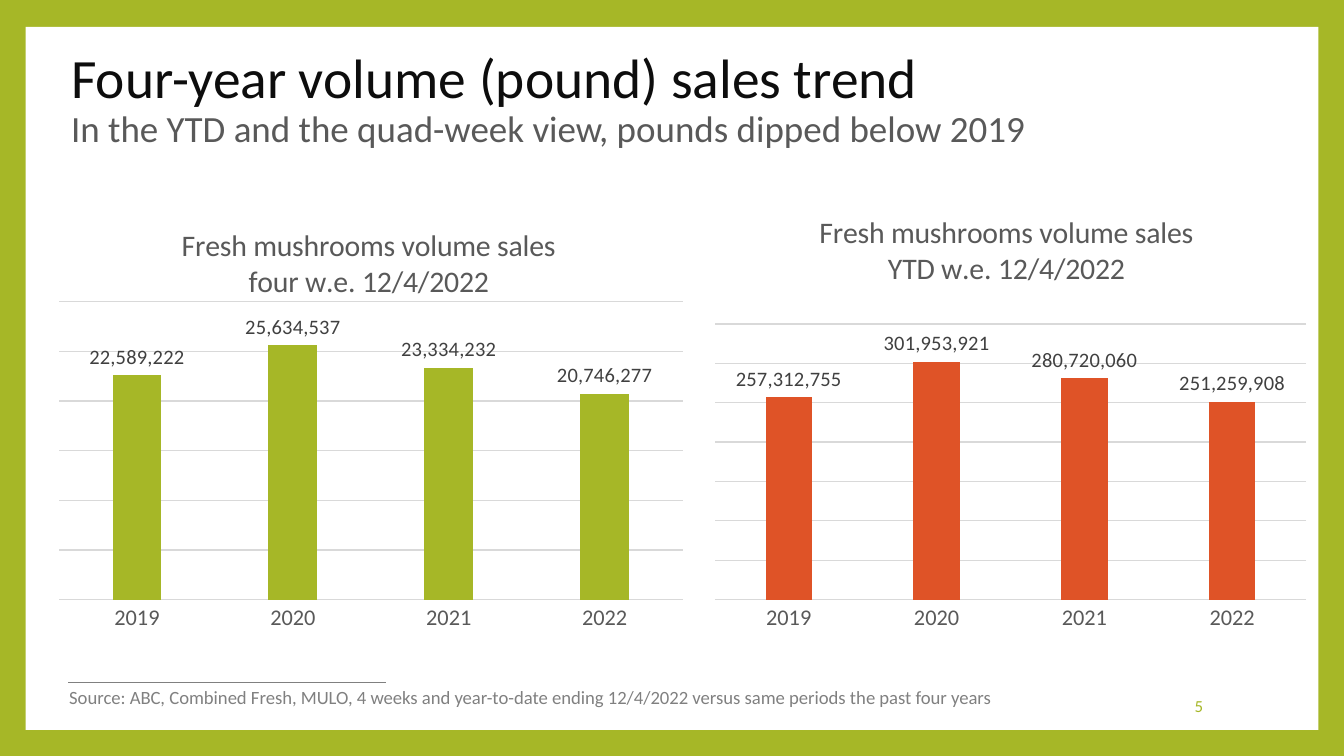
from lxml import etree
from pptx import Presentation
from pptx.chart.data import CategoryChartData
from pptx.dml.color import RGBColor
from pptx.enum.chart import XL_CHART_TYPE, XL_LABEL_POSITION, XL_TICK_MARK
from pptx.enum.shapes import MSO_CONNECTOR, MSO_SHAPE
from pptx.enum.text import MSO_ANCHOR, PP_ALIGN
from pptx.oxml.ns import qn
from pptx.util import Pt

COLUMNS = XL_CHART_TYPE.COLUMN_CLUSTERED
OUTSIDE_END = XL_LABEL_POSITION.OUTSIDE_END
NO_TICKS = XL_TICK_MARK.NONE
STRAIGHT = MSO_CONNECTOR.STRAIGHT
RECTANGLE = MSO_SHAPE.RECTANGLE
TOP, MIDDLE = MSO_ANCHOR.TOP, MSO_ANCHOR.MIDDLE
LEFT, RIGHT = PP_ALIGN.LEFT, PP_ALIGN.RIGHT

FONT = "Calibri"
GREEN, ORANGE, WHITE = "A6B727", "DF5327", "FFFFFF"
BLACK, DARK, TEXT_GRAY = "0D0D0D", "404040", "595959"
NOTE_GRAY, GRID_GRAY = "808080", "D9D9D9"
YEARS = ("2019", "2020", "2021", "2022")


def color(hex_string):
    return RGBColor.from_string(hex_string)


def style_font(font, size, hex_string):
    font.name = FONT
    font.size = Pt(size)
    font.bold = False
    font.color.rgb = color(hex_string)


def style_line(line, hex_string, width=0.75):
    line.color.rgb = color(hex_string)
    line.width = Pt(width)


def add_panel(slide, left, top, width, height):
    panel = slide.shapes.add_shape(RECTANGLE, Pt(left), Pt(top), Pt(width), Pt(height))
    panel.shadow.inherit = False
    panel.fill.solid()
    panel.fill.fore_color.rgb = color(WHITE)
    panel.line.fill.background()


def add_rule(slide, left, right, y):
    rule = slide.shapes.add_connector(STRAIGHT, Pt(left), Pt(y), Pt(right), Pt(y))
    style_line(rule.line, NOTE_GRAY, 0.79)
    etree.SubElement(rule.element.find(qn("p:spPr")), qn("a:effectLst"))


def add_text(slide, box, lines, anchor=TOP, align=LEFT, wrap=True, spacing=1.0):
    """Add one paragraph whose lines are (text, size, colour)."""
    frame = slide.shapes.add_textbox(*map(Pt, box)).text_frame
    frame.word_wrap = wrap
    frame.vertical_anchor = anchor
    paragraph = frame.paragraphs[0]
    paragraph.alignment = align
    paragraph.line_spacing = spacing
    for index, (text, size, hex_string) in enumerate(lines):
        if index:
            paragraph.add_line_break()
        run = paragraph.add_run()
        run.text = text
        style_font(run.font, size, hex_string)


def set_layout(parent, position, **values):
    """Place a chart part by fractions of the chart's size."""
    for old in parent.findall(qn("c:layout")):
        parent.remove(old)
    layout = etree.Element(qn("c:layout"))
    manual = etree.SubElement(layout, qn("c:manualLayout"))
    for tag, value in values.items():
        etree.SubElement(manual, qn(f"c:{tag}")).set("val", str(value))
    parent.insert(position, layout)


def add_title(chart, lines, x, y):
    title = chart.chart_title
    title.include_in_layout = False
    frame = title.text_frame
    frame.text = "\n".join(lines)
    for paragraph in frame.paragraphs:
        style_font(paragraph.font, 16, TEXT_GRAY)
    set_layout(chart.element.find(".//" + qn("c:title")), 1,
               xMode="edge", yMode="edge", x=x, y=y)


def add_sales_chart(slide, left, width, title, title_at, plot_top, plot_height,
                    sales, fill, axis_max, axis_step):
    data = CategoryChartData(number_format="#,##0")
    data.categories = YEARS
    data.add_series("Series 1", sales)
    chart = slide.shapes.add_chart(
        COLUMNS, Pt(left), Pt(111.6), Pt(width), Pt(238.3), data).chart
    style_font(chart.font, 10, "000000")
    chart.has_legend = False
    add_title(chart, title, *title_at)
    set_layout(chart.element.find(".//" + qn("c:plotArea")), 0,
               layoutTarget="inner", xMode="edge", yMode="edge",
               x=0, y=plot_top, w=1, h=plot_height)

    years = chart.category_axis
    years.major_tick_mark = NO_TICKS
    years.has_major_gridlines = False
    style_font(years.tick_labels.font, 12, TEXT_GRAY)
    style_line(years.format.line, GRID_GRAY)

    pounds = chart.value_axis
    pounds.visible = False
    pounds.minimum_scale = 0
    pounds.maximum_scale = axis_max
    pounds.major_unit = axis_step
    pounds.has_major_gridlines = True
    style_line(pounds.major_gridlines.format.line, GRID_GRAY)

    plot = chart.plots[0]
    plot.vary_by_categories = False
    plot.gap_width = 219
    plot.overlap = -27
    columns = plot.series[0].format.fill
    columns.solid()
    columns.fore_color.rgb = color(fill)

    plot.has_data_labels = True
    labels = plot.data_labels
    labels.show_value = True
    labels.position = OUTSIDE_END
    labels.number_format = "#,##0"
    labels.number_format_is_linked = False
    style_font(labels.font, 11, DARK)


def main():
    deck = Presentation()
    deck.slide_width, deck.slide_height = Pt(720), Pt(405)
    slide = deck.slides.add_slide(deck.slide_layouts[6])
    background = slide.background.fill
    background.solid()
    background.fore_color.rgb = color(GREEN)

    add_panel(slide, 13.7, 14.4, 692.6, 376.6)
    add_rule(slide, 36.7, 206.6, 365.6)
    add_text(slide, (31, 25.5, 668.9, 56.9), [
        ("Four-year volume (pound) sales trend", 29.7, BLACK),
        ("In the YTD and the quad-week view, pounds dipped below 2019", 19.8, TEXT_GRAY),
    ], anchor=MIDDLE, spacing=0.9)
    add_text(slide, (550.8, 367.2, 100.8, 21.6), [("5", 9, GREEN)],
             anchor=MIDDLE, align=RIGHT)
    add_text(slide, (30, 363.8, 519.8, 19.4), [
        ("Source: ABC, Combined Fresh, MULO, 4 weeks and year-to-date ending "
         "12/4/2022 versus same periods the past four years", 10, NOTE_GRAY),
    ], wrap=False)

    add_sales_chart(
        slide, 31.3, 334.8, ("Fresh mushrooms volume sales", "four w.e. 12/4/2022"),
        (0.19, 0.03), 0.21, 0.67,
        (22589222, 25634537, 23334232, 20746277), GREEN, 30_000_000, 5_000_000)
    add_sales_chart(
        slide, 382.6, 317.5, ("Fresh mushrooms volume sales", "YTD w.e. 12/4/2022"),
        (0.17, 0), 0.26, 0.62,
        (257312755, 301953921, 280720060, 251259908), ORANGE, 350_000_000, 50_000_000)

    deck.save("out.pptx")


if __name__ == "__main__":
    main()
